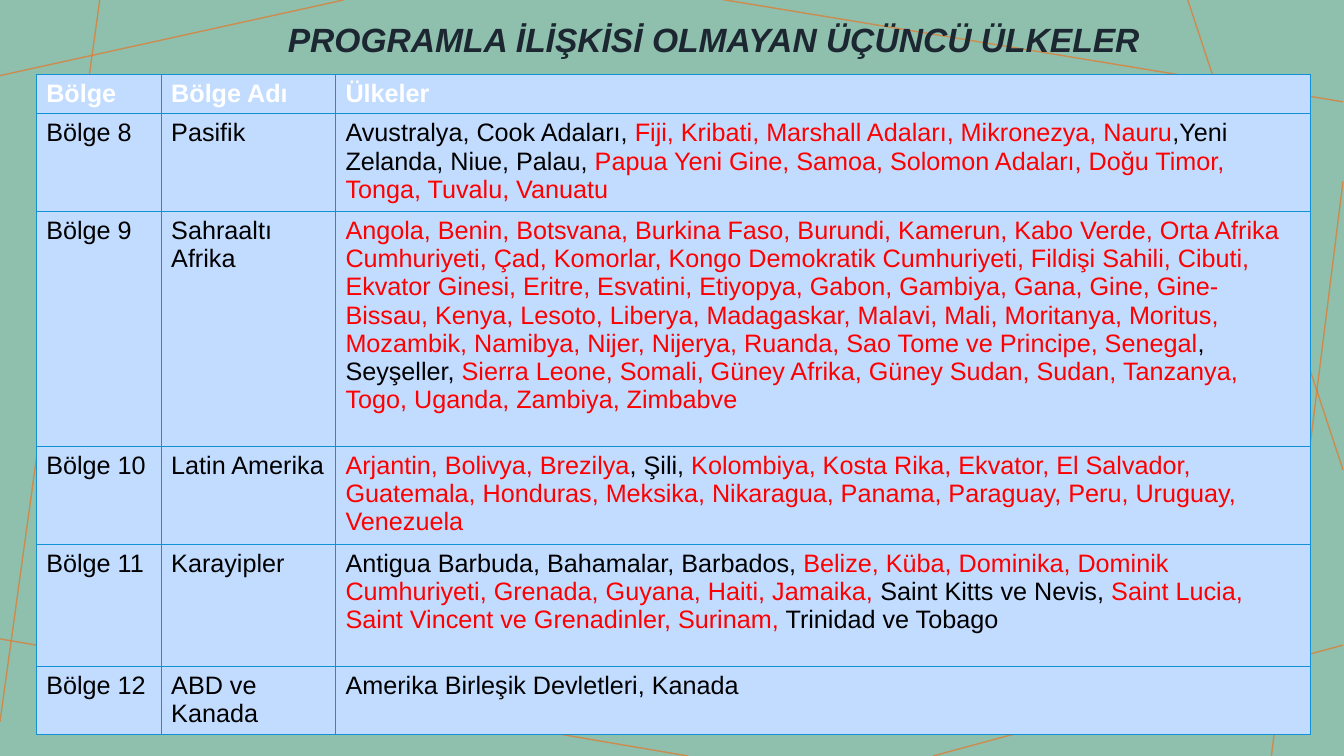
from lxml import etree
from pptx import Presentation
from pptx.dml.color import RGBColor
from pptx.enum.shapes import MSO_CONNECTOR
from pptx.enum.text import MSO_ANCHOR, MSO_AUTO_SIZE, PP_ALIGN
from pptx.oxml import parse_xml
from pptx.oxml.ns import nsdecls, qn
from pptx.util import Inches, Pt

COLORS = {
    "background": "8FC0AD", "strand": "E77629", "title": "1C2732",
    "cell": "C2DCFF", "border": "1291D5", "header": "FFFFFF",
    "black": "000000", "red": "FF0000",
}


def rgb(name):
    return RGBColor.from_string(COLORS[name])


def write(frame, text, size=18, colors=("black", "red"), bold=False, italic=False,
          align=PP_ALIGN.LEFT, spacing=1.0):
    """Fill the frame; each "|" in the text switches between the two colours."""
    frame.word_wrap = True
    paragraph = frame.paragraphs[0]
    paragraph.alignment = align
    paragraph.line_spacing = spacing
    for i, part in enumerate(text.split("|")):
        if part:
            run = paragraph.add_run()
            run.text = part
            run.font.name = "Arial"
            run.font.size = Pt(size)
            run.font.bold = bold
            run.font.italic = italic
            run.font.color.rgb = rgb(colors[i % 2])


prs = Presentation()
prs.slide_width, prs.slide_height = Inches(13.34), Inches(7.5)
slide = prs.slides.add_slide(prs.slide_layouts[5])
slide.background.fill.solid()
slide.background.fill.fore_color.rgb = rgb("background")

# Thin strands crossing the background
STRANDS = [
    (3.41, 0, 0, 0.75), (0.99, 0, 0, 7.16), (6.83, 7.5, -0.05, 6.33),
    (13.33, 6.4, 9.26, 7.5), (13.33, 1.8, 12.62, 7.5),
    (13.33, 4.66, 11.79, 0), (13.33, 1.01, 7.14, -0.01),
]
for ends in STRANDS:
    strand = slide.shapes.add_connector(MSO_CONNECTOR.STRAIGHT, *map(Inches, ends))
    strand.line.width = Pt(1)
    strand.line.color.rgb = rgb("strand")
    properties = strand._element.spPr
    tint = properties.find(".//" + qn("a:srgbClr"))
    etree.SubElement(tint, qn("a:alpha"), val="70000")
    etree.SubElement(properties, qn("a:effectLst"))

# Title, lifted above the strands
title = slide.shapes.title
title.left, title.top, title.width, title.height = map(Inches, (0.63, 0.11, 12.91, 0.6))
title.text_frame.auto_size = MSO_AUTO_SIZE.NONE
title.text_frame.vertical_anchor = MSO_ANCHOR.MIDDLE
write(title.text_frame, "PROGRAMLA İLİŞKİSİ OLMAYAN ÜÇÜNCÜ ÜLKELER", size=24,
      colors=("title",), bold=True, italic=True, align=PP_ALIGN.CENTER, spacing=0.9)
slide.shapes._spTree.append(title._element)

# Regions and their countries; red stretches stand between bars
REGIONS = [
    ("Bölge", "Bölge Adı", "Ülkeler"),
    ("Bölge 8", "Pasifik",
     "Avustralya, Cook Adaları, |Fiji, Kribati, Marshall Adaları, Mikronezya, Nauru|"
     ",Yeni Zelanda, Niue, Palau, |Papua Yeni Gine, Samoa, Solomon Adaları, "
     "Doğu Timor, Tonga, Tuvalu, Vanuatu"),
    ("Bölge 9", "Sahraaltı Afrika",
     "|Angola, Benin, Botsvana, Burkina Faso, Burundi, Kamerun, Kabo Verde, "
     "Orta Afrika Cumhuriyeti, Çad, Komorlar, Kongo Demokratik Cumhuriyeti, "
     "Fildişi Sahili, Cibuti, Ekvator Ginesi, Eritre, Esvatini, Etiyopya, Gabon, "
     "Gambiya, Gana, Gine, Gine-Bissau, Kenya, Lesoto, Liberya, Madagaskar, Malavi, "
     "Mali, Moritanya, Moritus, Mozambik, Namibya, Nijer, Nijerya, Ruanda, "
     "Sao Tome ve Principe, Senegal|, Seyşeller, |Sierra Leone, Somali, "
     "Güney Afrika, Güney Sudan, Sudan, Tanzanya, Togo, Uganda, Zambiya, Zimbabve"),
    ("Bölge 10", "Latin Amerika",
     "|Arjantin, Bolivya, Brezilya|, Şili, |Kolombiya, Kosta Rika, Ekvator, "
     "El Salvador, Guatemala, Honduras, Meksika, Nikaragua, Panama, Paraguay, "
     "Peru, Uruguay, Venezuela"),
    ("Bölge 11", "Karayipler",
     "Antigua Barbuda, Bahamalar, Barbados, |Belize, Küba, Dominika, "
     "Dominik Cumhuriyeti, Grenada, Guyana, Haiti, Jamaika,| Saint Kitts ve Nevis, |"
     "Saint Lucia, Saint Vincent ve Grenadinler, Surinam,| Trinidad ve Tobago"),
    ("Bölge 12", "ABD ve Kanada", "Amerika Birleşik Devletleri, Kanada"),
]
COLUMN_WIDTHS = [1.24, 1.73, 9.68]
ROW_HEIGHTS = [0.39, 0.97, 2.33, 0.97, 1.21, 0.68]

regions = slide.shapes.add_table(
    len(REGIONS), len(COLUMN_WIDTHS), Inches(0.36), Inches(0.74),
    Inches(sum(COLUMN_WIDTHS)), Inches(sum(ROW_HEIGHTS))).table
regions.horz_banding = False
for column, width in zip(regions.columns, COLUMN_WIDTHS):
    column.width = Inches(width)
for row, height in zip(regions.rows, ROW_HEIGHTS):
    row.height = Inches(height)

for r, region in enumerate(REGIONS):
    for c, text in enumerate(region):
        cell = regions.cell(r, c)
        cell.fill.solid()
        cell.fill.fore_color.rgb = rgb("cell")
        if r == 0:
            write(cell.text_frame, text, colors=("header",), bold=True)
        else:
            write(cell.text_frame, text)
        cell_properties = cell._tc.get_or_add_tcPr()
        for i, side in enumerate("LRTB"):
            cell_properties.insert(i, parse_xml(
                f'<a:ln{side} {nsdecls("a")} w="{Pt(0.75)}"><a:solidFill>'
                f'<a:srgbClr val="{COLORS["border"]}"/></a:solidFill></a:ln{side}>'))

prs.save("out.pptx")
